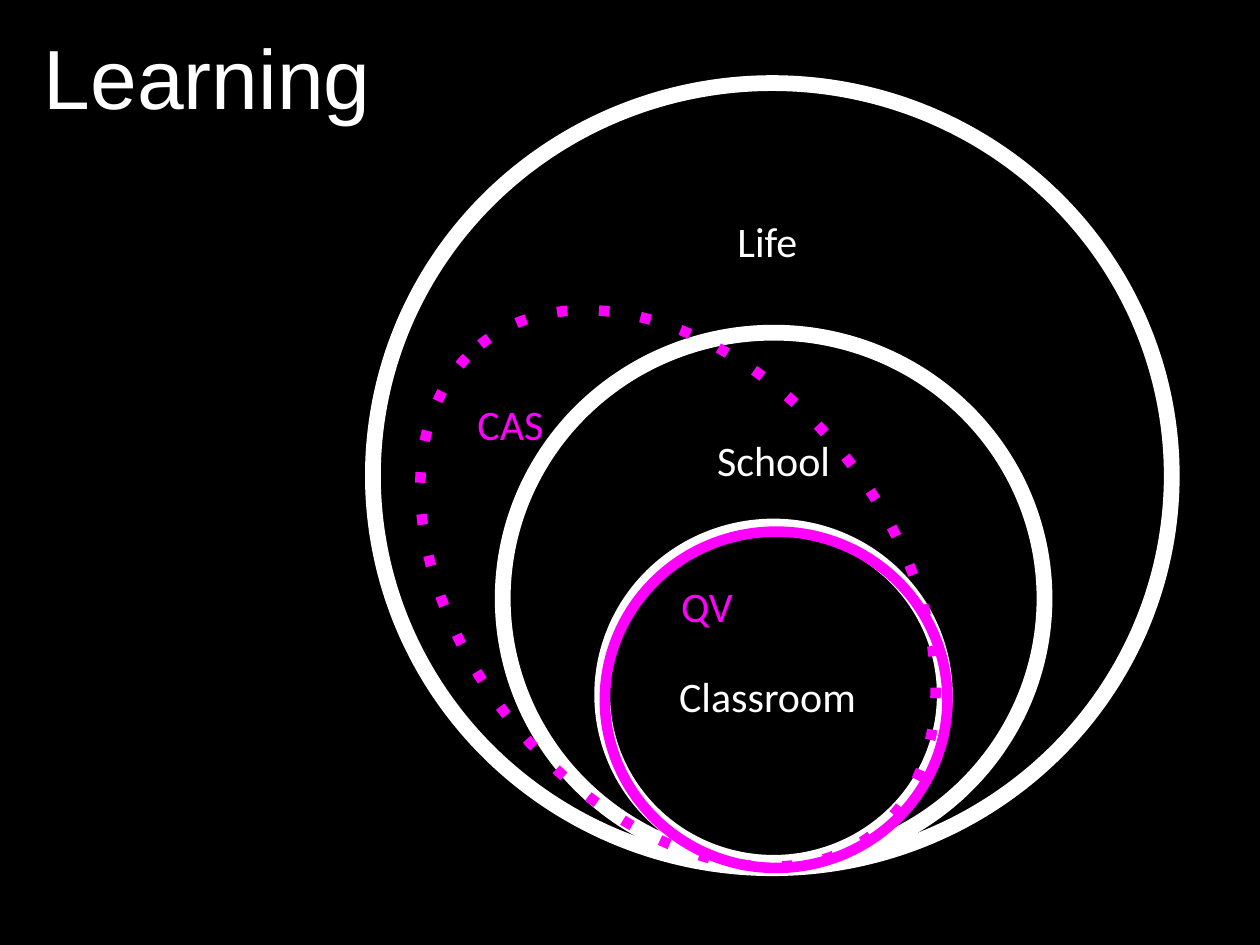
from pptx import Presentation
from pptx.dml.color import RGBColor
from pptx.enum.shapes import MSO_SHAPE
from pptx.enum.dml import MSO_LINE
from pptx.enum.text import MSO_ANCHOR, PP_ALIGN
from pptx.oxml.ns import qn
from pptx.util import Pt

OVAL = MSO_SHAPE.OVAL
DOT = MSO_LINE.ROUND_DOT
TOP, MIDDLE = MSO_ANCHOR.TOP, MSO_ANCHOR.MIDDLE
LEFT, CENTER = PP_ALIGN.LEFT, PP_ALIGN.CENTER
BLACK, WHITE, PINK = "000000", "FFFFFF", "FF00FF"
INSET = 7.2


def color(code):
    return RGBColor.from_string(code)


def add_text(slide, text, box, size=24, font="Calibri", ink=WHITE,
             align=CENTER, anchor=TOP):
    frame = slide.shapes.add_textbox(*map(Pt, box)).text_frame
    frame.word_wrap = True
    frame.vertical_anchor = anchor
    frame.margin_left = frame.margin_right = Pt(INSET)
    frame.margin_top = frame.margin_bottom = Pt(INSET)
    para = frame.paragraphs[0]
    para.alignment = align
    run = para.add_run()
    run.text = text
    run.font.size = Pt(size)
    run.font.name = font
    run.font.color.rgb = color(ink)


def add_ring(slide, box, ink, width, turn=0, dotted=False):
    ring = slide.shapes.add_shape(OVAL, *map(Pt, box))
    ring.shadow.inherit = False
    ring.fill.background()
    ring.line.color.rgb = color(ink)
    ring.line.width = Pt(width)
    ring.rotation = turn
    if dotted:
        ring.line.dash_style = DOT
        # The wide-gapped preset "dot" has no enum member.
        next(ring._element.iter(qn("a:prstDash"))).set("val", "dot")


def add_label(slide, text, mid, top, ink=WHITE):
    """Centre a one-line label on the x position mid."""
    wide, high = 190, 39.6
    add_text(slide, text, (mid - wide / 2, top, wide, high), ink=ink)


def draw_rings(slide, box):
    """Nest the learning circles in box, with the QV and CAS overlays."""
    x, y, wide, high = box
    for dx, dy, w, h in ((131, 253.4, 195.8, 192.2),
                         (74.2, 142.6, 309.6, 303.8),
                         (0, 0, wide, high)):
        add_ring(slide, (x + dx, y + dy, w, h), WHITE, 9)
    for text, dx, dy in (("Classroom", 225.4, 328.3),
                         ("Life", 225.4, 68.4),
                         ("School", 229, 193.7)):
        add_label(slide, text, x + dx, y + dy)
    add_ring(slide, (x - 5, y + 167, 358.6, 243.4), PINK, 6, 51, True)
    add_ring(slide, (x + 132.5, y + 256.3, 195.8, 192.2), PINK, 6)
    add_label(slide, "QV", x + 190.8, y + 277.2, PINK)
    add_label(slide, "CAS", x + 78.5, y + 172.8, PINK)


def main():
    deck = Presentation()
    deck.slide_width, deck.slide_height = Pt(720), Pt(540)
    slide = deck.slides.add_slide(deck.slide_layouts[6])
    back = slide.background.fill
    back.solid()
    back.fore_color.rgb = color(BLACK)
    draw_rings(slide, (213.1, 47.5, 456.5, 448.6))
    add_text(slide, "Learning", (18, 6.5, 237.6, 74.2), size=48,
             font="Arial", align=LEFT, anchor=MIDDLE)
    deck.save("out.pptx")


if __name__ == "__main__":
    main()
